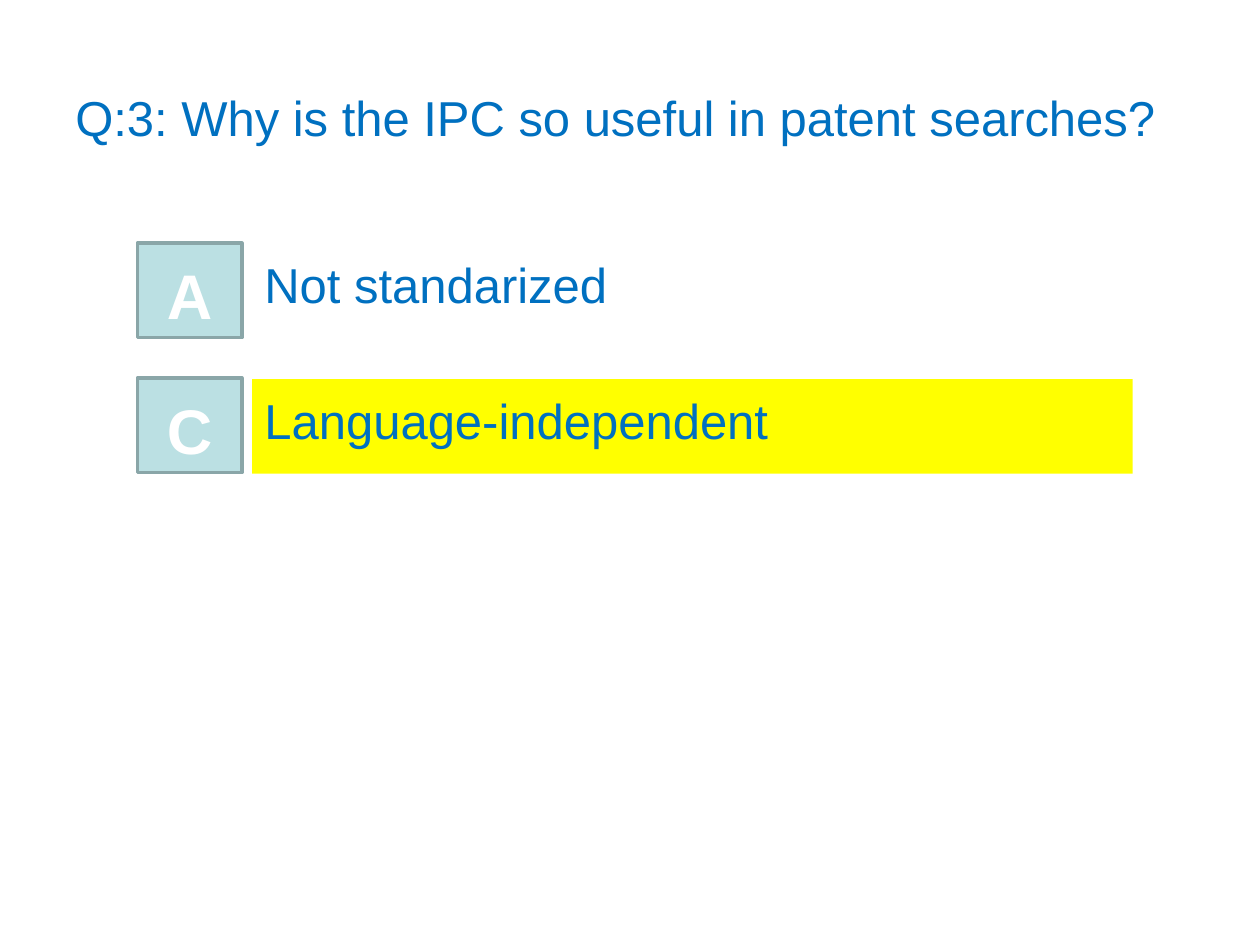
from dataclasses import dataclass

from pptx import Presentation
from pptx.dml.color import RGBColor
from pptx.enum.shapes import MSO_SHAPE
from pptx.enum.text import MSO_ANCHOR, PP_ALIGN
from pptx.util import Emu, Pt

EMU_PER_PX = 9144


def px(n):
    return Emu(n * EMU_PER_PX)


@dataclass(frozen=True)
class Theme:
    font: str = "Arial"
    text: RGBColor = RGBColor(0x00, 0x70, 0xC0)
    letter: RGBColor = RGBColor(0xFF, 0xFF, 0xFF)
    button: RGBColor = RGBColor(0xBB, 0xE0, 0xE3)
    border: RGBColor = RGBColor(0x8A, 0xA6, 0xA8)
    highlight: RGBColor = RGBColor(0xFF, 0xFF, 0x00)
    text_size: int = 28
    letter_size: int = 36
    border_width: int = 2


class QuizSlide:
    def __init__(self, prs, theme):
        self.theme = theme
        self.s = prs.slides.add_slide(prs.slide_layouts[6])

    def set_text(self, sp, text, size, color, align, anchor, bold=False):
        tf = sp.text_frame
        tf.word_wrap = True
        tf.vertical_anchor = anchor
        tf.text = text
        p = tf.paragraphs[0]
        p.alignment = align
        font = p.runs[0].font
        font.name = self.theme.font
        font.size = Pt(size)
        font.bold = bold
        font.color.rgb = color

    def shape(self, kind, box, fill):
        sp = self.s.shapes.add_shape(kind, *map(px, box))
        sp.shadow.inherit = False
        sp.fill.solid()
        sp.fill.fore_color.rgb = fill
        sp.line.fill.background()
        return sp

    def question(self, text, box):
        sp = self.s.shapes.add_textbox(*map(px, box))
        self.set_text(sp, text, self.theme.text_size, self.theme.text,
                      PP_ALIGN.LEFT, MSO_ANCHOR.MIDDLE)

    def answer(self, text, box, correct):
        if correct:
            sp = self.shape(MSO_SHAPE.RECTANGLE, box, self.theme.highlight)
        else:
            sp = self.s.shapes.add_textbox(*map(px, box))
        self.set_text(sp, text, self.theme.text_size, self.theme.text,
                      PP_ALIGN.LEFT, MSO_ANCHOR.TOP)
        sp.text_frame.margin_top = px(9)

    def button(self, letter, box):
        sp = self.shape(MSO_SHAPE.ACTION_BUTTON_CUSTOM, box, self.theme.button)
        sp.line.color.rgb = self.theme.border
        sp.line.width = Pt(self.theme.border_width)
        self.set_text(sp, letter, self.theme.letter_size, self.theme.letter,
                      PP_ALIGN.CENTER, MSO_ANCHOR.MIDDLE, bold=True)
        sp.text_frame.margin_top = px(11)


def main():
    prs = Presentation()
    prs.slide_width, prs.slide_height = px(1000), px(750)
    quiz = QuizSlide(prs, Theme())
    quiz.question("Q:3: Why is the IPC so useful in patent searches?",
                  (50, 30, 900, 125))

    answers = [("A", "Not standarized", False),
               ("C", "Language-independent", True)]
    top, pitch, height = 193, 107, 75
    for i, (letter, text, correct) in enumerate(answers):
        y = top + i * pitch
        quiz.answer(text, (200, y + correct, 699, height), correct)
        quiz.button(letter, (109, y, 83, height))
    prs.save("out.pptx")


if __name__ == "__main__":
    main()
